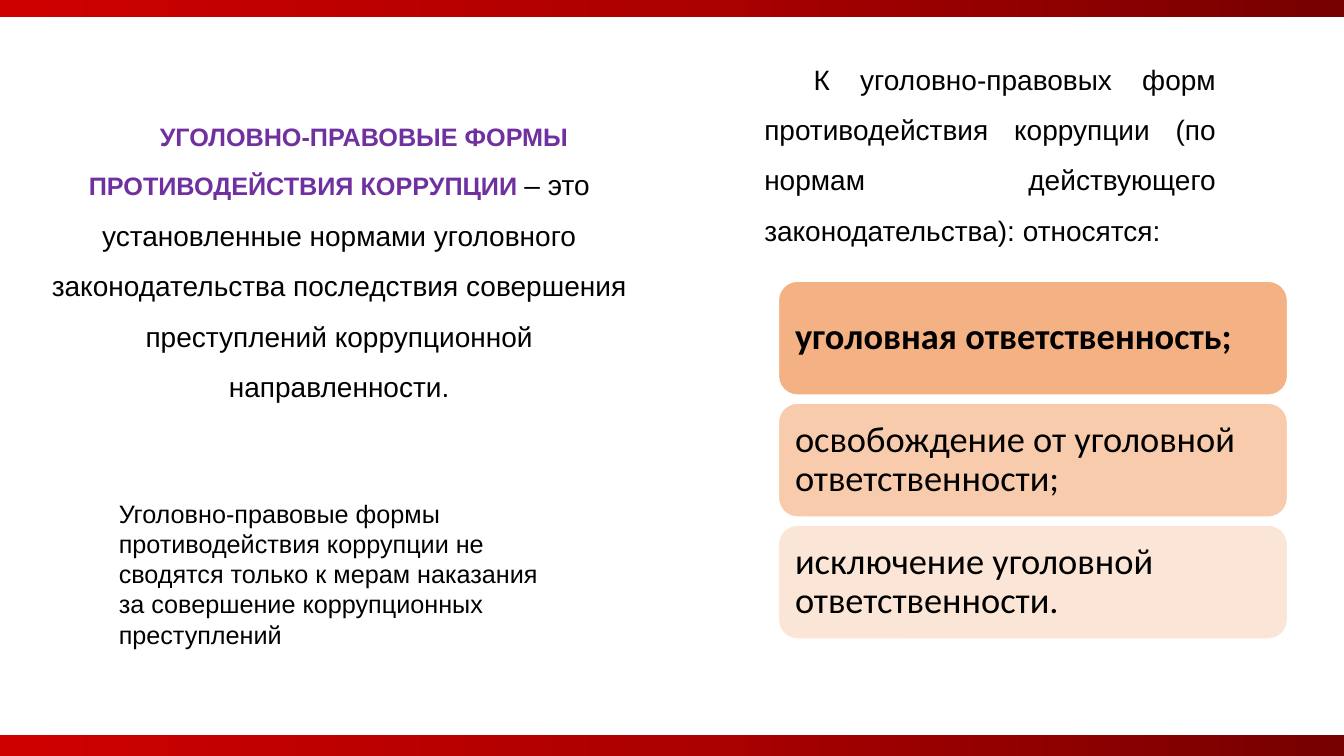
from copy import deepcopy

from pptx import Presentation
from pptx.dml.color import RGBColor
from pptx.enum.shapes import MSO_SHAPE as Shape
from pptx.enum.text import MSO_ANCHOR as Anchor, MSO_AUTO_SIZE as AutoSize, PP_ALIGN as Align
from pptx.oxml.ns import qn
from pptx.util import Pt

PX = 9144  # 100 px to the inch
SLIDE_WIDTH, SLIDE_HEIGHT = 1333, 750

BLACK = RGBColor(0x00, 0x00, 0x00)
WHITE = RGBColor(0xFF, 0xFF, 0xFF)
PURPLE = RGBColor(0x70, 0x30, 0xA0)
BAR_STOPS = [
    (0, RGBColor(0xCE, 0x00, 0x00)),
    (0.5, RGBColor(0xAD, 0x00, 0x00)),
    (1, RGBColor(0x77, 0x00, 0x00)),
]

TERM = "УГОЛОВНО-ПРАВОВЫЕ ФОРМЫ ПРОТИВОДЕЙСТВИЯ КОРРУПЦИИ "
DEFINITION = (
    "– это установленные нормами уголовного законодательства последствия "
    "совершения преступлений коррупционной направленности."
)
REMARK = (
    "Уголовно-правовые формы противодействия коррупции не сводятся только "
    "к мерам наказания за совершение коррупционных преступлений"
)
FORMS_INTRO = (
    "К уголовно-правовых форм противодействия коррупции "
    "(по нормам действующего законодательства): относятся:"
)
FORMS = [
    ("уголовная ответственность;", RGBColor(0xF4, 0xB1, 0x83), True),
    ("освобождение от уголовной ответственности;", RGBColor(0xF8, 0xCB, 0xAD), False),
    ("исключение уголовной ответственности.", RGBColor(0xFB, 0xE5, 0xD6), False),
]
FORM_TOP, FORM_HEIGHT, FORM_STEP = 279, 113, 121


def box(*lengths):
    return [length * PX for length in lengths]


class SlideBuilder:
    text_font = "Arial"
    card_font = "Calibri"

    def __init__(self, slide):
        self.slide = slide

    def style(self, font, size, color=BLACK, bold=False):
        font.size = Pt(size)
        font.bold = bold
        font.color.rgb = color

    def indent(self, paragraph, margin, first_line):
        properties = paragraph._p.get_or_add_pPr()
        properties.set("marL", str(margin * PX))
        properties.set("indent", str(first_line * PX))

    def shape(self, preset, *place):
        shape = self.slide.shapes.add_shape(preset, *box(*place))
        shape.shadow.inherit = False
        return shape

    def bar(self, top):
        bar = self.shape(Shape.RECTANGLE, 0, top, SLIDE_WIDTH, 21)
        bar.line.fill.background()
        bar.fill.gradient()
        bar.fill.gradient_angle = 0
        stop_list = bar._element.spPr.find(".//" + qn("a:gsLst"))
        stop_list.insert(1, deepcopy(stop_list[0]))
        for stop, (position, color) in zip(bar.fill.gradient_stops, BAR_STOPS):
            stop.position = position
            stop.color.rgb = color

    def text(self, *place):
        """Add a wrapping text box and return its first paragraph."""
        frame = self.slide.shapes.add_textbox(*box(*place)).text_frame
        frame.word_wrap = True
        paragraph = frame.paragraphs[0]
        paragraph.font.name = self.text_font
        return paragraph

    def definition(self, term, meaning, *place):
        paragraph = self.text(*place)
        paragraph.alignment = Align.CENTER
        paragraph.line_spacing = 1.5
        self.indent(paragraph, 0, 49)
        for words, size, color, bold in ((term, 18, PURPLE, True), (meaning, 20, BLACK, False)):
            run = paragraph.add_run()
            run.text = words
            self.style(run.font, size, color, bold)

    def remark(self, words, *place):
        paragraph = self.text(*place)
        paragraph.text = words
        self.style(paragraph.font, 18)

    def body(self, words, *place):
        body = self.slide.placeholders[1]
        body.left, body.top, body.width, body.height = box(*place)
        frame = body.text_frame
        frame.auto_size = AutoSize.NONE
        paragraph = frame.paragraphs[0]
        paragraph.text = words
        paragraph.alignment = Align.JUSTIFY
        paragraph.line_spacing = 1.5
        paragraph.space_before = Pt(0)
        self.indent(paragraph, 25, 49)
        properties = paragraph._p.get_or_add_pPr()
        properties.append(properties.makeelement(qn("a:buNone"), {}))
        paragraph.font.name = self.text_font
        self.style(paragraph.font, 20)

    def card(self, words, color, bold, *place):
        card = self.shape(Shape.ROUNDED_RECTANGLE, *place)
        card.fill.solid()
        card.fill.fore_color.rgb = color
        card.line.color.rgb = WHITE
        card.line.width = Pt(1)
        frame = card.text_frame
        frame.word_wrap = True
        frame.vertical_anchor = Anchor.MIDDLE
        frame.margin_left = frame.margin_right = 11 * PX
        frame.margin_top = frame.margin_bottom = 11 * PX
        paragraph = frame.paragraphs[0]
        paragraph.text = words
        paragraph.alignment = Align.LEFT
        paragraph.line_spacing = 0.9
        paragraph.font.name = self.card_font
        self.style(paragraph.font, 26, BLACK, bold)


def main():
    deck = Presentation()
    deck.slide_width, deck.slide_height = box(SLIDE_WIDTH, SLIDE_HEIGHT)
    slide = deck.slides.add_slide(deck.slide_layouts[1])
    empty_title = slide.shapes.title._element
    empty_title.getparent().remove(empty_title)

    builder = SlideBuilder(slide)
    builder.definition(TERM, DEFINITION, 40, 100, 593, 307)
    for top in (-4, 729):
        builder.bar(top)
    builder.remark(REMARK, 108, 489, 453, 162)
    builder.body(FORMS_INTRO, 723, 40, 493, 335)
    for row, (words, color, bold) in enumerate(FORMS):
        top = FORM_TOP + row * FORM_STEP
        builder.card(words, color, bold, 772, top, 505, FORM_HEIGHT)
    deck.save("out.pptx")


if __name__ == "__main__":
    main()
